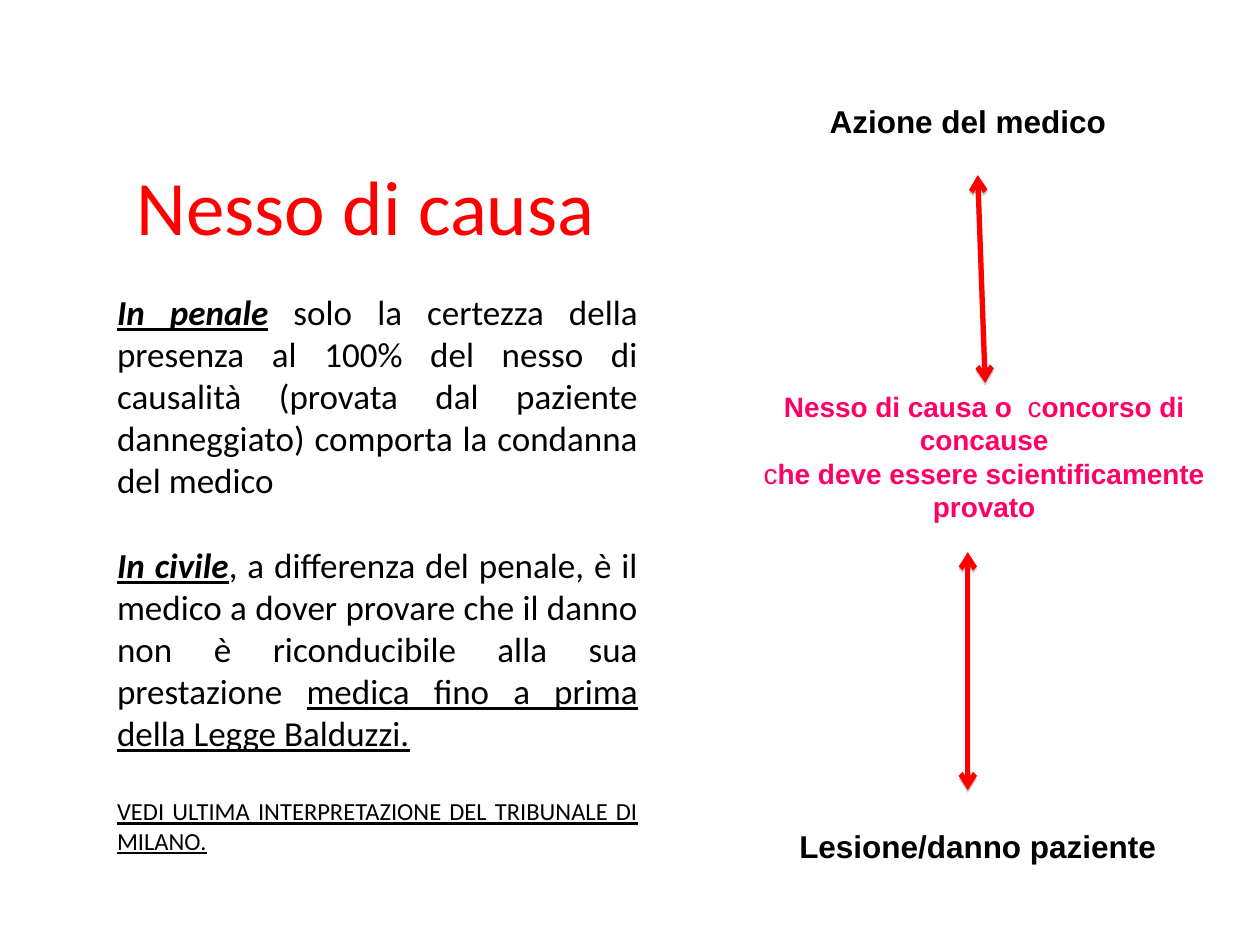
from lxml import etree
from pptx import Presentation
from pptx.dml.color import RGBColor
from pptx.enum.shapes import MSO_CONNECTOR
from pptx.enum.text import MSO_ANCHOR, PP_ALIGN
from pptx.oxml import parse_xml
from pptx.oxml.ns import nsdecls, qn
from pptx.util import Cm, Pt

STRAIGHT = MSO_CONNECTOR.STRAIGHT
TOP, MIDDLE = MSO_ANCHOR.TOP, MSO_ANCHOR.MIDDLE
CENTER, JUSTIFY = PP_ALIGN.CENTER, PP_ALIGN.JUSTIFY

BLACK = RGBColor(0x00, 0x00, 0x00)
RED = RGBColor(0xFF, 0x00, 0x00)
PINK = RGBColor(0xFF, 0x00, 0x66)

SHADOW = (
    f'<a:effectLst {nsdecls("a")}>'
    '<a:outerShdw blurRad="0" dist="20320" dir="5400000" rotWithShape="0">'
    '<a:srgbClr val="808080"><a:alpha val="38000"/></a:srgbClr>'
    '</a:outerShdw></a:effectLst>'
)


def add_run(paragraph, text, *, font="Calibri", size=20, color=BLACK,
            bold=False, italic=False, underline=False):
    run = paragraph.add_run()
    run.text = text
    run.font.name = font
    run.font.size = Pt(size)
    run.font.color.rgb = color
    run.font.bold = bold
    run.font.italic = italic
    run.font.underline = underline


class SlideBuilder:
    def __init__(self, slide):
        self.slide = slide
        self.arrow_color = RED
        self.arrow_width = Pt(3)

    def text(self, box, paragraphs, align=CENTER, anchor=TOP, gap=0, **style):
        shape = self.slide.shapes.add_textbox(*map(Cm, box))
        frame = shape.text_frame
        frame.word_wrap = True
        frame.vertical_anchor = anchor
        for index, runs in enumerate(paragraphs):
            paragraph = frame.add_paragraph() if index else frame.paragraphs[0]
            paragraph.alignment = align
            if index:
                paragraph.space_before = Pt(gap)
            for text, changes in runs:
                add_run(paragraph, text, **{**style, **changes})

    def double_arrow(self, start, end):
        connector = self.slide.shapes.add_connector(
            STRAIGHT, *map(Cm, start + end))
        connector.line.color.rgb = self.arrow_color
        connector.line.width = self.arrow_width
        properties = connector.element.spPr
        outline = properties.find(qn("a:ln"))
        for end_name in ("a:headEnd", "a:tailEnd"):
            etree.SubElement(outline, qn(end_name), type="arrow")
        properties.append(parse_xml(SHADOW))


def main():
    presentation = Presentation()
    presentation.slide_width = Cm(25.4)
    presentation.slide_height = Cm(19.05)
    slide = presentation.slides.add_slide(presentation.slide_layouts[6])
    builder = SlideBuilder(slide)

    label = {"font": "Arial", "size": 18, "bold": True}
    builder.text((14.1, 1.93, 11, 1.02), [[("Azione del medico ", {})]], **label)
    builder.text((14.3, 16.54, 11, 1.02),
                 [[("Lesione/danno paziente ", {})]], **label)

    builder.double_arrow((19.71, 3.53), (19.86, 7.72))
    builder.double_arrow((19.51, 11.13), (19.51, 15.93))

    regular = {"bold": False}
    builder.text((15.09, 7.72, 9.5, 3), [
        [("Nesso di causa o  ", {}), ("c", regular), ("oncorso di concause", {})],
        [("c", regular), ("he deve essere scientificamente provato", {})],
    ], font="Arial", size=16, color=PINK, bold=True)

    key_term = {"bold": True, "italic": True, "underline": True}
    builder.text((2.11, 5.74, 11, 11.71), [
        [("In penale", key_term),
         (" solo la certezza della presenza al 100% del nesso di causalità "
          "(provata dal paziente danneggiato) comporta la condanna del medico", {})],
        [("In civile", key_term),
         (", a differenza del penale, è il medico a dover provare che il danno "
          "non è riconducibile alla sua prestazione ", {}),
         ("medica fino a prima della Legge Balduzzi.", {"underline": True})],
        [("VEDI ULTIMA INTERPRETAZIONE DEL TRIBUNALE DI MILANO.",
          {"size": 14, "underline": True})],
    ], align=JUSTIFY, gap=24.4)

    builder.text((1.09, 3.12, 12.57, 2), [[("Nesso di causa", {})]],
                 anchor=MIDDLE, size=44, color=RED)

    presentation.save("out.pptx")


if __name__ == "__main__":
    main()
